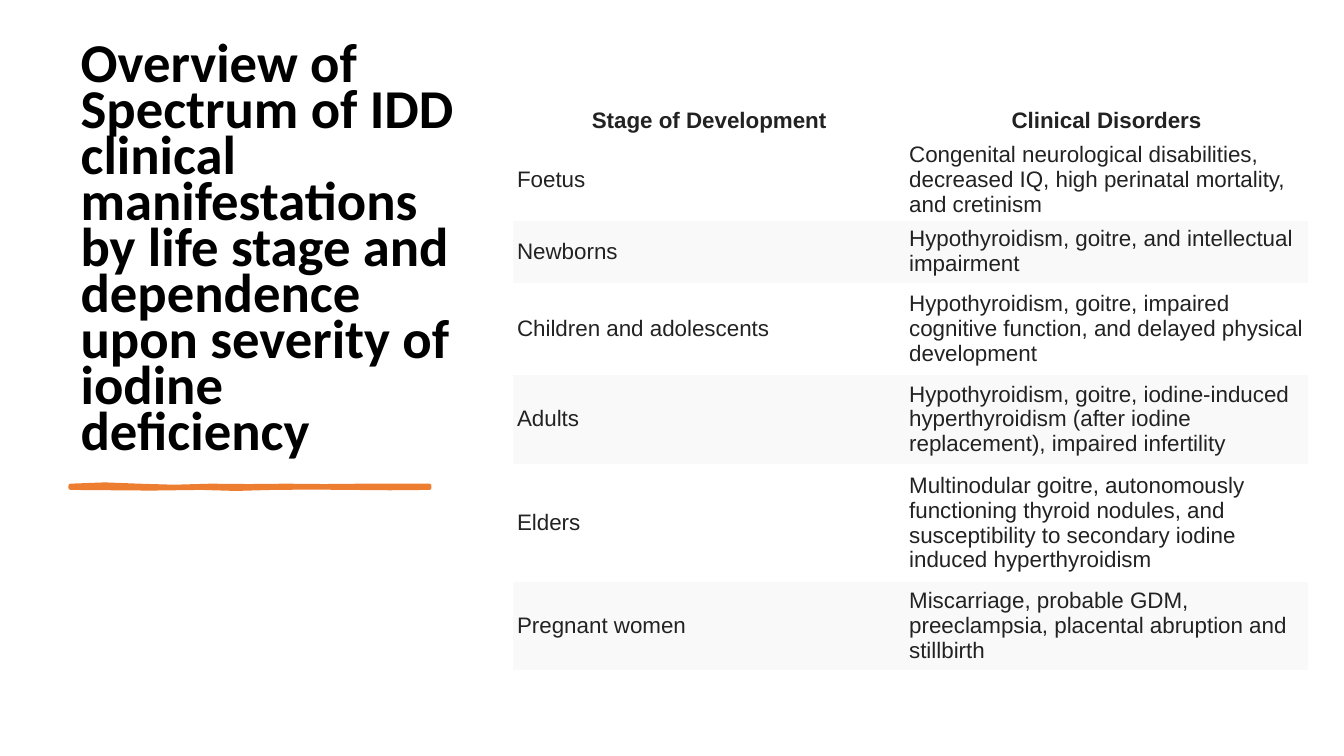
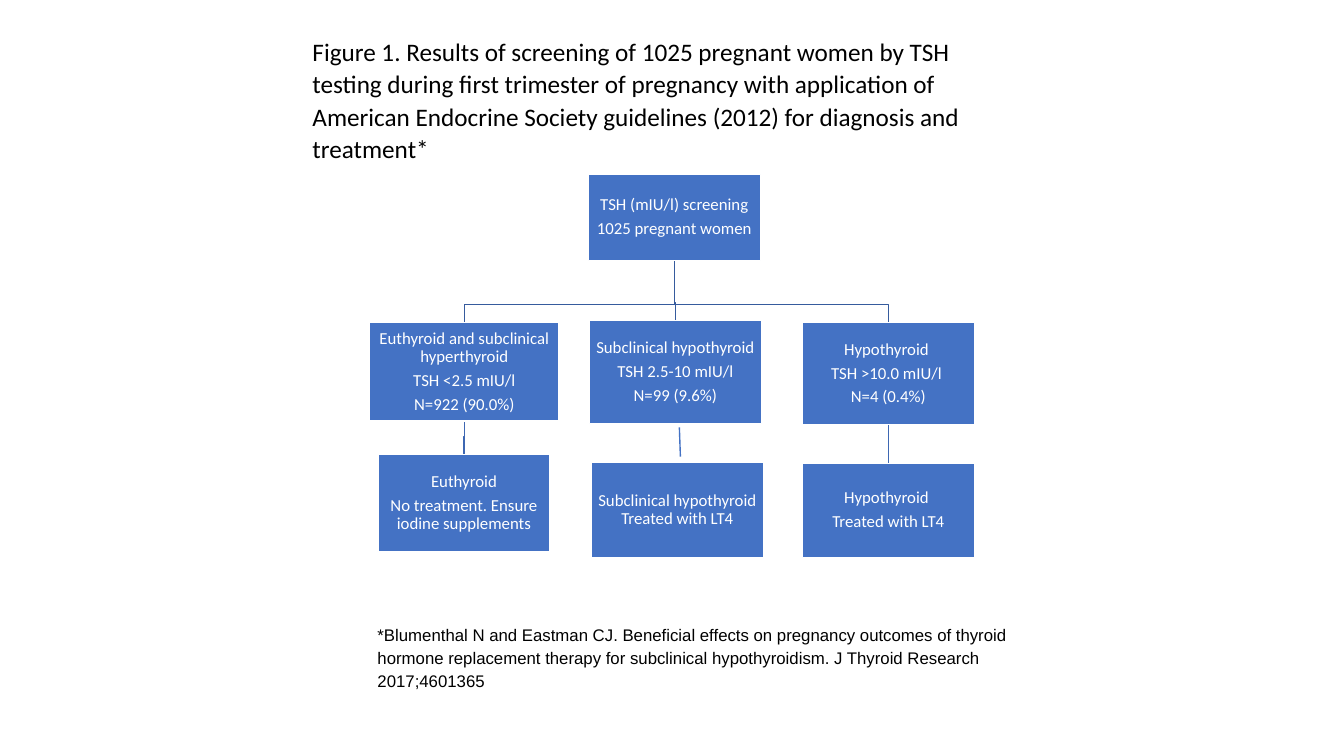
from dataclasses import dataclass
from typing import NamedTuple

import lxml.etree
import pptx
import pptx.dml.color
import pptx.enum.shapes
import pptx.enum.text
import pptx.oxml
import pptx.oxml.ns
import pptx.util

Align = pptx.enum.text.PP_ALIGN
Anchor = pptx.enum.text.MSO_ANCHOR
Color = pptx.dml.color.RGBColor
qn = pptx.oxml.ns.qn

EMU_PER_PX = 3048
BOTTOM, TOP = 2, 0
TITLE_ONLY_LAYOUT = 5
NO_GRID_STYLE = "{2D5ABB26-0587-4C30-8999-92F81FD0307C}"


@dataclass(frozen=True)
class Theme:
    heading_font: str = "Calibri"
    plain_font: str = "Arial"
    black: Color = Color.from_string("000000")
    white: Color = Color.from_string("FFFFFF")
    ink: Color = Color.from_string("222222")
    band: Color = Color.from_string("F9F9F9")
    accent: Color = Color.from_string("ED7D31")
    node: Color = Color.from_string("4472C4")
    branch: Color = Color.from_string("365B9D")
    outcome: Color = Color.from_string("3E67B2")
    title_size: float = 39.1
    caption_size: float = 18
    table_size: float = 16
    small_size: float = 12


THEME = Theme()


class Area(NamedTuple):
    left: int
    top: int
    width: int
    height: int


class Point(NamedTuple):
    x: int
    y: int


@dataclass(frozen=True)
class TextStyle:
    font: str
    size: float
    color: Color
    bold: bool = False
    align: Align = Align.LEFT
    spacing: float = 1.0
    after: float = 0


@dataclass(frozen=True)
class Node:
    area: Area
    lines: tuple[str, ...]

    def top(self) -> Point:
        return Point(self.area.left + self.area.width // 2, self.area.top)

    def bottom(self) -> Point:
        return Point(self.top().x, self.area.top + self.area.height)


@dataclass(frozen=True)
class Row:
    height: int
    texts: tuple[str, str]


TITLE = TextStyle(THEME.heading_font, THEME.title_size, THEME.black, True, spacing=0.7, after=6)
CAPTION = TextStyle(THEME.heading_font, THEME.caption_size, THEME.black, spacing=1.07, after=8)
CITATION = TextStyle(THEME.plain_font, THEME.small_size, THEME.black, spacing=1.15, after=10)
NODE = TextStyle(THEME.heading_font, THEME.small_size, THEME.white, align=Align.CENTER,
                 spacing=0.9, after=4)
CELL = TextStyle(THEME.plain_font, THEME.table_size, THEME.ink)
HEADER = TextStyle(THEME.plain_font, THEME.table_size, THEME.ink, True, Align.CENTER)

COLUMN_WIDTHS = (1167, 1199)
ROWS = (
    Row(118, ("Stage of Development", "Clinical Disorders")),
    Row(240, ("Foetus", "Congenital neurological disabilities, decreased IQ, "
                        "high perinatal mortality, and cretinism")),
    Row(187, ("Newborns", "Hypothyroidism, goitre, and intellectual impairment")),
    Row(272, ("Children and adolescents", "Hypothyroidism, goitre, impaired cognitive "
                                          "function, and delayed physical development")),
    Row(267, ("Adults", "Hypothyroidism, goitre, iodine-induced hyperthyroidism "
                        "(after iodine replacement), impaired infertility")),
    Row(350, ("Elders", "Multinodular goitre, autonomously functioning thyroid nodules, and "
                        "susceptibility to secondary iodine induced hyperthyroidism")),
    Row(263, ("Pregnant women", "Miscarriage, probable GDM, preeclampsia, "
                                "placental abruption and stillbirth")),
)

UNDERLINE = (
    (210, 1446), (312, 1442), (414, 1446), (518, 1449), (627, 1446), (740, 1447), (852, 1446),
    (965, 1447), (1077, 1446), (1278, 1446), (1278, 1452), (1160, 1453), (1044, 1452),
    (928, 1451), (810, 1452), (703, 1455), (597, 1452), (450, 1454), (210, 1452),
)

SCREENING = Node(Area(1751, 519, 512, 256), ("TSH (mIU/l) screening", "1025 pregnant women"))
DIAGNOSES = (
    Node(Area(1100, 960, 564, 293), ("Euthyroid and subclinical hyperthyroid",
                                     "TSH <2.5 mIU/l", "N=922 (90.0%)")),
    Node(Area(1754, 954, 512, 306), ("Subclinical hypothyroid", "TSH 2.5-10 mIU/l",
                                     "N=99 (9.6%)")),
    Node(Area(2388, 960, 512, 305), ("Hypothyroid ", "TSH >10.0 mIU/l ", "N=4 (0.4%)")),
)
TREATMENTS = (
    Node(Area(1125, 1353, 512, 288), ("Euthyroid", "No treatment. Ensure iodine supplements")),
    Node(Area(1760, 1375, 512, 286), ("Subclinical hypothyroid Treated with LT4",)),
    Node(Area(2388, 1378, 512, 281), ("Hypothyroid ", "Treated with LT4")),
)
BEND_HEIGHTS = (906, 900, 906)
TREATMENT_BEND = 1299


def px(length: int) -> pptx.util.Emu:
    return pptx.util.Emu(length * EMU_PER_PX)


def emu(area: Area) -> list[pptx.util.Emu]:
    return [px(length) for length in area]


def write(frame, lines: tuple[str, ...], style: TextStyle) -> None:
    frame.text = "\n".join(lines)
    frame.word_wrap = True
    for para in frame.paragraphs:
        para.alignment = style.align
        para.line_spacing = style.spacing
        para.space_after = pptx.util.Pt(style.after)
        for span in para.runs:
            span.font.name = style.font
            span.font.size = pptx.util.Pt(style.size)
            span.font.bold = style.bold
            span.font.color.rgb = style.color


def add_page(deck, title: str, area: Area, style: TextStyle, anchor: Anchor):
    page = deck.slides.add_slide(deck.slide_layouts[TITLE_ONLY_LAYOUT])
    box = page.shapes.title
    box.left, box.top, box.width, box.height = emu(area)
    write(box.text_frame, (title,), style)
    box.text_frame.auto_size = pptx.enum.text.MSO_AUTO_SIZE.NONE
    box.text_frame.vertical_anchor = anchor
    return page


def add_outline(page, points: tuple, color: Color, width: float, closed: bool) -> None:
    start, *rest = points
    builder = page.shapes.build_freeform(*start, scale=EMU_PER_PX)
    builder.add_line_segments(rest, close=closed)
    outline = builder.convert_to_shape()
    outline.shadow.inherit = False
    if closed:
        outline.fill.solid()
        outline.fill.fore_color.rgb = color
    else:
        outline.fill.background()
    outline.line.color.rgb = color
    outline.line.width = pptx.util.Pt(width)


def add_cell_borders(cell) -> None:
    properties = cell._tc.get_or_add_tcPr()
    for index, tag in enumerate(("a:lnT", "a:lnB")):
        border = lxml.etree.Element(qn(tag), w=str(pptx.util.Pt(0.75)))
        fill = lxml.etree.SubElement(border, qn("a:solidFill"))
        lxml.etree.SubElement(fill, qn("a:srgbClr"), val=str(THEME.white))
        properties.insert(index, border)


def add_disorder_table(page, left: int, top: int) -> None:
    area = Area(left, top, sum(COLUMN_WIDTHS), sum(row.height for row in ROWS))
    table = page.shapes.add_table(len(ROWS), len(COLUMN_WIDTHS), *emu(area)).table
    table.first_row = table.horz_banding = False
    table._tbl.tblPr.find(qn("a:tableStyleId")).text = NO_GRID_STYLE
    for column, width in zip(table.columns, COLUMN_WIDTHS):
        column.width = px(width)
    for row_index, row in enumerate(ROWS):
        table.rows[row_index].height = px(row.height)
        is_header = row_index == 0
        is_band = row_index > 0 and row_index % 2 == 0
        for column_index, text in enumerate(row.texts):
            cell = table.cell(row_index, column_index)
            write(cell.text_frame, (text,), HEADER if is_header else CELL)
            cell.vertical_anchor = Anchor.MIDDLE
            cell.margin_left = cell.margin_right = px(12)
            cell.margin_top = px(18 if is_header else 9)
            cell.margin_bottom = px(9)
            cell.fill.solid()
            cell.fill.fore_color.rgb = THEME.band if is_band else THEME.white
            add_cell_borders(cell)


def add_node(page, node: Node):
    box = page.shapes.add_shape(pptx.enum.shapes.MSO_SHAPE.RECTANGLE, *emu(node.area))
    box.shadow.inherit = False
    box.fill.solid()
    box.fill.fore_color.rgb = THEME.node
    box.line.color.rgb = THEME.white
    box.line.width = pptx.util.Pt(1)
    frame = box.text_frame
    write(frame, node.lines, NODE)
    frame.vertical_anchor = Anchor.MIDDLE
    frame.margin_left = frame.margin_right = frame.margin_top = frame.margin_bottom = px(3)
    return box


def add_line(page, start: Point, end: Point, color: Color):
    line = page.shapes.add_connector(pptx.enum.shapes.MSO_CONNECTOR.STRAIGHT,
                                     *(px(length) for length in start + end))
    line.line.color.rgb = color
    line.line.width = pptx.util.Pt(1)
    lxml.etree.SubElement(line._element.spPr, qn("a:effectLst"))
    return line


def add_route(page, upper: Node, lower: Node, bend: int, color: Color) -> None:
    start, end = upper.bottom(), lower.top()
    points = (start, Point(start.x, bend), Point(end.x, bend), end)
    add_outline(page, points, color, 1, closed=False)


def add_screening_tree(page) -> None:
    for diagnosis, bend in zip(DIAGNOSES, BEND_HEIGHTS):
        add_route(page, SCREENING, diagnosis, bend, THEME.branch)
    add_route(page, DIAGNOSES[0], TREATMENTS[0], TREATMENT_BEND, THEME.outcome)
    add_node(page, SCREENING)
    diagnosis_boxes = [add_node(page, node) for node in DIAGNOSES]
    treatment_boxes = [add_node(page, node) for node in TREATMENTS]
    link = add_line(page, DIAGNOSES[-1].bottom(), TREATMENTS[-1].top(), THEME.outcome)
    link.begin_connect(diagnosis_boxes[-1], BOTTOM)
    link.end_connect(treatment_boxes[-1], TOP)
    add_line(page, Point(2022, 1272), Point(2025, 1359), THEME.node)


def add_citation(page, text: str, area: Area) -> None:
    box = page.shapes.add_textbox(*emu(area))
    write(box.text_frame, (text,), CITATION)


def build_disorders(deck) -> None:
    page = add_page(
        deck,
        "Overview of Spectrum of IDD clinical manifestations by life stage and "
        "dependence upon severity of iodine deficiency",
        Area(210, 210, 1173, 1173), TITLE, Anchor.BOTTOM)
    add_outline(page, UNDERLINE, THEME.accent, 3, closed=True)
    add_disorder_table(page, 1527, 297)


def build_screening(deck) -> None:
    page = add_page(
        deck,
        "Figure 1. Results of screening of 1025 pregnant women by TSH testing during first "
        "trimester of pregnancy with application of American Endocrine Society guidelines "
        "(2012) for diagnosis and treatment*",
        Area(900, 87, 2001, 414), CAPTION, Anchor.TOP)
    add_screening_tree(page)
    add_citation(
        page,
        "*Blumenthal N and Eastman CJ. Beneficial effects on pregnancy outcomes of thyroid "
        "hormone replacement therapy for subclinical hypothyroidism. J Thyroid Research "
        "2017;4601365",
        Area(1094, 1835, 1971, 234))


def main() -> None:
    deck = pptx.Presentation()
    deck.slide_width, deck.slide_height = px(4000), px(2250)
    build_disorders(deck)
    build_screening(deck)
    deck.save("out.pptx")


if __name__ == "__main__":
    main()
